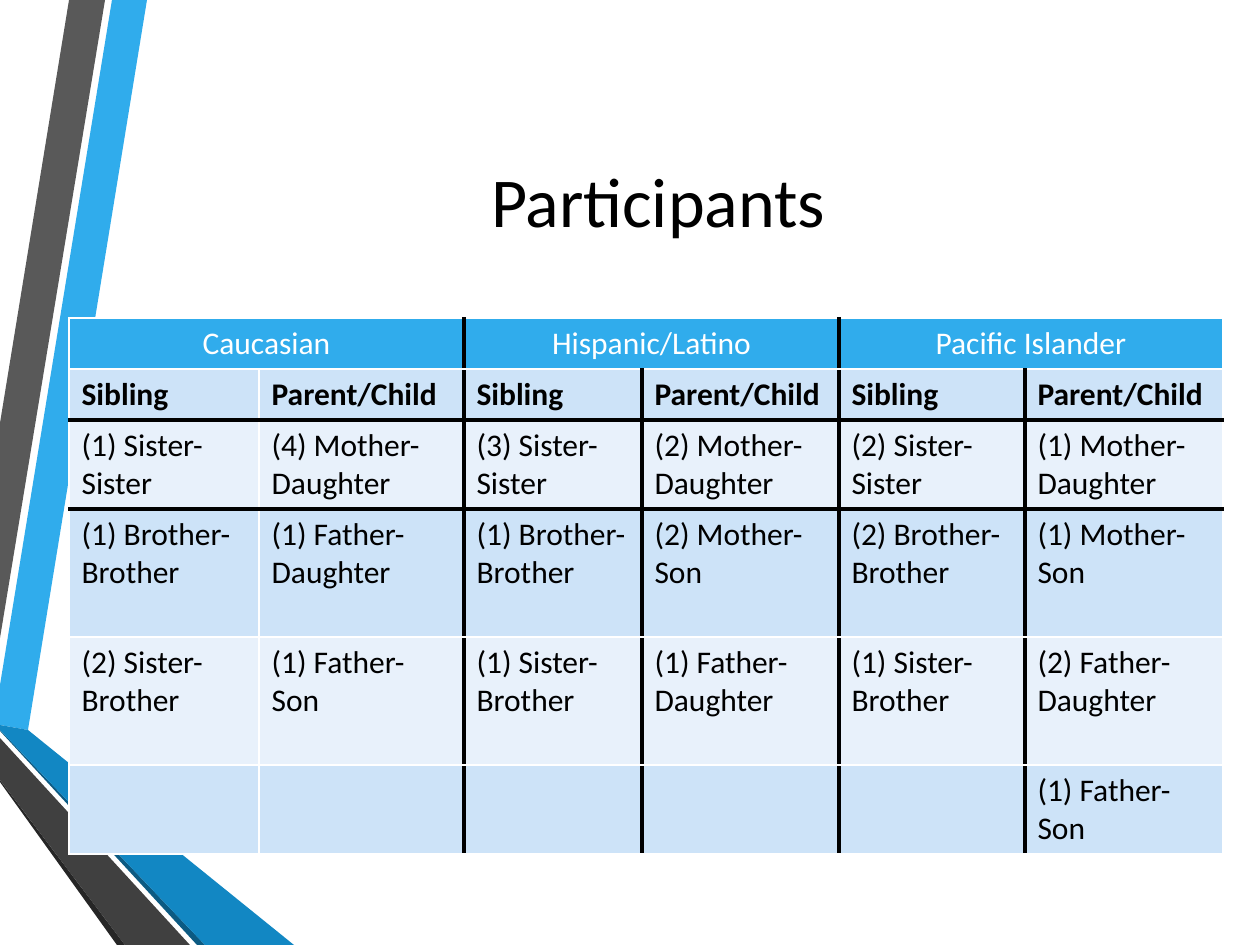
from lxml.etree import SubElement
from pptx import Presentation
from pptx.dml.color import RGBColor
from pptx.enum.text import MSO_ANCHOR, PP_ALIGN
from pptx.oxml.ns import qn
from pptx.util import Pt

SCALE = 914400 / 126
FONT = "Calibri"
COLORS = {
    "white": "FFFFFF", "black": "000000", "blue": "30ACEC", "gray": "595959",
    "dark_gray": "404040", "gray_edge": "262626", "dark_blue": "1287C3",
    "blue_edge": "0C5A82", "band": "CDE3F8", "light_band": "E8F1FB",
}
RIBBONS = [
    ("blue", [(0, 685), (0, 725), (28, 730), (147, 0), (112, 0)]),
    ("gray", [(105, 0), (69, 0), (0, 423), (0, 638)]),
    ("gray_edge", [(0, 780), (0, 782), (117, 945), (125, 945)]),
    ("blue_edge", [(0, 730), (0, 731), (197, 945), (205, 945)]),
    ("dark_blue", [(0, 730), (205, 945), (294, 945), (28, 730), (0, 725)]),
    ("dark_gray", [(0, 780), (125, 945), (190, 945), (0, 738)]),
]
GROUPS = ["Caucasian", "Hispanic/Latino", "Pacific Islander"]
ROWS = [
    ["Sibling", "Parent/Child"] * 3,
    ["(1) Sister-Sister", "(4) Mother-Daughter", "(3) Sister-Sister",
     "(2) Mother-Daughter", "(2) Sister-Sister", "(1) Mother-Daughter"],
    ["(1) Brother-Brother", "(1) Father- Daughter", "(1) Brother-Brother",
     "(2) Mother- Son", "(2) Brother-Brother", "(1) Mother- Son"],
    ["(2) Sister-Brother", "(1) Father-Son", "(1) Sister-Brother",
     "(1) Father- Daughter", "(1) Sister-Brother", "(2) Father- Daughter"],
    ["", "", "", "", "", "(1) Father-Son"],
]
COLUMN_WIDTHS = [190, 205, 178, 197, 186, 198]
ROW_HEIGHTS = [51, 51, 89, 128, 128, 89]
HEAVY_ROW_EDGES = {2, 3}
HEAVY_GROUP_EDGES = {2, 4}
HEAVY_COLUMN_EDGES = {2, 3, 4, 5}


def px(value):
    """Turn px into EMU."""
    return round(value * SCALE)


def color(name):
    """Look up a colour by name."""
    return RGBColor.from_string(COLORS[name])


def format_text(text_frame, size, color_name, bold=False, align=PP_ALIGN.LEFT):
    """Format every run of a text frame."""
    for paragraph in text_frame.paragraphs:
        paragraph.alignment = align
        paragraph.font.size = Pt(size)
        for run in paragraph.runs:
            run.font.name = FONT
            run.font.size = Pt(size)
            run.font.bold = bold
            run.font.color.rgb = color(color_name)


def add_ribbons(slide, left, top):
    """Draw the folded ribbons from the box's top left corner."""
    for color_name, points in RIBBONS:
        corners = [(left + x, top + y) for x, y in points]
        builder = slide.shapes.build_freeform(*corners[0], scale=SCALE)
        builder.add_line_segments(corners[1:], close=True)
        shape = builder.convert_to_shape()
        shape.shadow.inherit = False
        shape.fill.solid()
        shape.fill.fore_color.rgb = color(color_name)
        shape.line.fill.background()


def add_title(slide, left, top, width, height):
    """Place the centred slide title."""
    shape = slide.shapes.add_textbox(px(left), px(top), px(width), px(height))
    text_frame = shape.text_frame
    text_frame.word_wrap = True
    text_frame.vertical_anchor = MSO_ANCHOR.MIDDLE
    text_frame.text = "Participants "
    format_text(text_frame, 40, "black", align=PP_ALIGN.CENTER)


def set_borders(cell, row, column):
    """Give a cell heavy black or thin white borders by its grid position."""
    heavy_columns = HEAVY_COLUMN_EDGES if row else HEAVY_GROUP_EDGES
    edges = {
        "a:lnL": column in heavy_columns,
        "a:lnR": column + 1 in heavy_columns,
        "a:lnT": row in HEAVY_ROW_EDGES,
        "a:lnB": row + 1 in HEAVY_ROW_EDGES,
    }
    properties = cell._tc.get_or_add_tcPr()
    for tag, heavy in edges.items():
        line = SubElement(properties, qn(tag), w=str(Pt(3 if heavy else 1)))
        fill = SubElement(line, qn("a:solidFill"))
        SubElement(fill, qn("a:srgbClr"), val=COLORS["black" if heavy else "white"])


def add_participant_table(slide, left, top):
    """Place the table of participant pairs by group."""
    frame = slide.shapes.add_table(
        len(ROW_HEIGHTS), len(COLUMN_WIDTHS), px(left), px(top),
        px(sum(COLUMN_WIDTHS)), px(sum(ROW_HEIGHTS)))
    table = frame.table
    for column, width in zip(table.columns, COLUMN_WIDTHS):
        column.width = px(width)
    for row, height in zip(table.rows, ROW_HEIGHTS):
        row.height = px(height)
    header = [text for group in GROUPS for text in (group, "")]
    for row, texts in enumerate([header] + ROWS):
        fill_name = "blue" if row == 0 else "band" if row % 2 else "light_band"
        for column, text in enumerate(texts):
            cell = table.cell(row, column)
            cell.text_frame.text = text
            if row == 0:
                format_text(cell.text_frame, 18, "white", align=PP_ALIGN.CENTER)
            else:
                format_text(cell.text_frame, 18, "black", bold=row == 1)
            set_borders(cell, row, column)
            cell.fill.solid()
            cell.fill.fore_color.rgb = color(fill_name)
    for column in range(0, len(COLUMN_WIDTHS), 2):
        table.cell(0, column).merge(table.cell(0, column + 1))


def main():
    """Build and save the presentation."""
    presentation = Presentation()
    presentation.slide_width = px(1260)
    presentation.slide_height = px(945)
    slide = presentation.slides.add_slide(presentation.slide_layouts[6])
    add_ribbons(slide, 0, 0)
    add_title(slide, 135, 63, 1062, 273)
    add_participant_table(slide, 69, 318)
    presentation.save("out.pptx")


if __name__ == "__main__":
    main()
